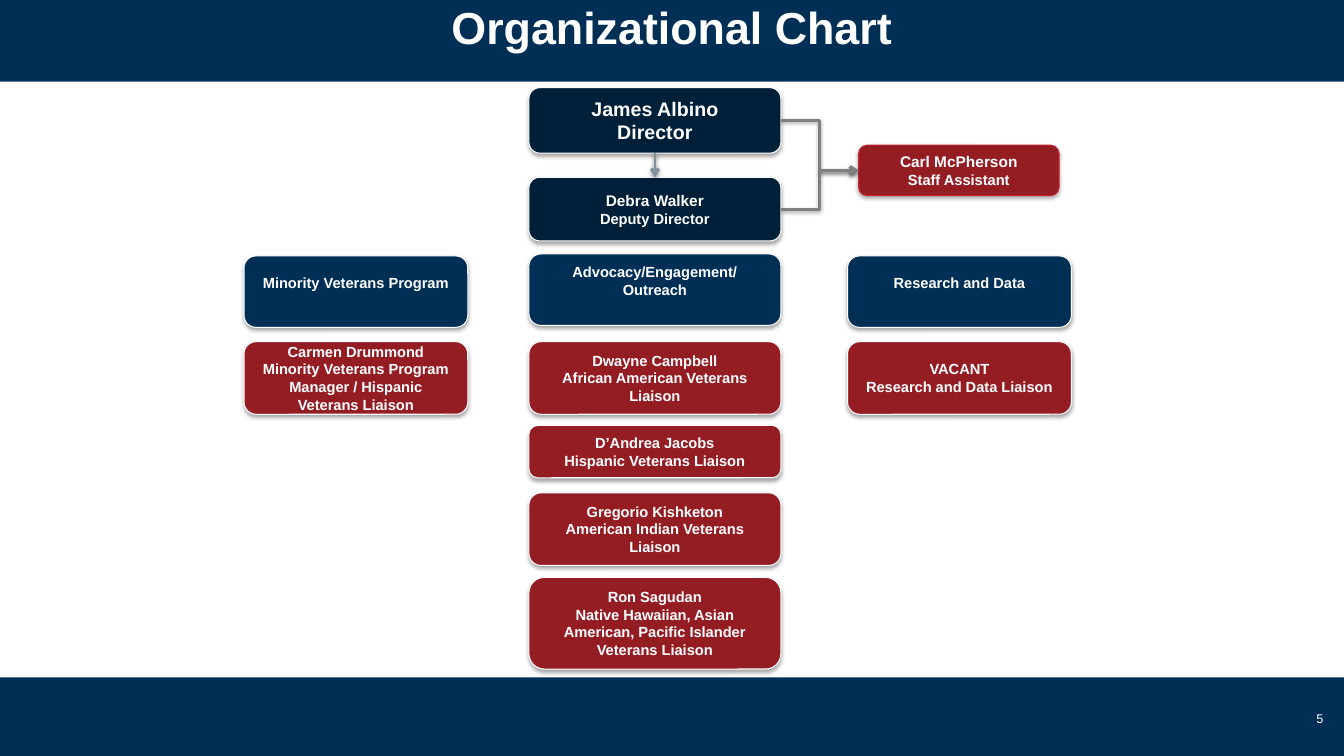
from dataclasses import dataclass

from lxml.etree import SubElement
from pptx import Presentation
from pptx.dml.color import RGBColor
from pptx.enum.shapes import MSO_CONNECTOR, MSO_SHAPE
from pptx.enum.text import MSO_ANCHOR, PP_ALIGN
from pptx.oxml.ns import qn
from pptx.util import Cm, Pt

SLIDE_WIDTH, SLIDE_HEIGHT = 33.87, 19.05
TOP, LEFT, BOTTOM, RIGHT = range(4)


@dataclass(frozen=True)
class Theme:
    font: str = "Arial"
    navy: str = "002F56"
    dark_navy: str = "001F39"
    red: str = "941D24"
    light_red: str = "C62630"
    white: str = "FFFFFF"
    gray: str = "808080"
    blue_gray: str = "839097"
    black: str = "000000"
    title_size: float = 32
    director_size: float = 14
    name_size: float = 11
    body_size: float = 10.5
    number_size: float = 9


def write_text(shape, lines, sizes, font, color, bold=True,
               align=PP_ALIGN.CENTER, anchor=MSO_ANCHOR.MIDDLE, margin_bottom=0.13):
    """Fill a shape with one paragraph per line, each with its own size."""
    frame = shape.text_frame
    frame.word_wrap = True
    frame.vertical_anchor = anchor
    frame.margin_bottom = Cm(margin_bottom)
    frame.text = "\n".join(lines)
    for paragraph, size in zip(frame.paragraphs, sizes):
        paragraph.alignment = align
        paragraph.font.name = font
        paragraph.font.size = Pt(size)
        paragraph.font.bold = bold
        paragraph.font.color.rgb = RGBColor.from_string(color)


def add_shadow(shape, color, opacity, distance):
    """Add a soft shadow straight below; call after fill and line are set."""
    effects = SubElement(shape.element.spPr, qn("a:effectLst"))
    shadow = SubElement(effects, qn("a:outerShdw"), blurRad=str(Pt(3.1)),
                        dist=str(Pt(distance)), dir="5400000", rotWithShape="0")
    tint = SubElement(shadow, qn("a:srgbClr"), val=color)
    SubElement(tint, qn("a:alpha"), val=str(opacity * 1000))


class OrgChart:
    """Holds the theme and the slide that the elements are drawn on."""

    def __init__(self, slide, theme):
        self.slide = slide
        self.theme = theme

    def band(self, top, height):
        band = self.slide.shapes.add_shape(
            MSO_SHAPE.RECTANGLE, 0, Cm(top), Cm(SLIDE_WIDTH), Cm(height))
        band.fill.solid()
        band.fill.fore_color.rgb = RGBColor.from_string(self.theme.navy)
        band.line.fill.background()
        band.shadow.inherit = False

    def title(self, text):
        title = self.slide.shapes.title
        title.left, title.top = Cm(0), Cm(-0.25)
        title.width, title.height = Cm(SLIDE_WIDTH), Cm(1.85)
        write_text(title, [text], [self.theme.title_size],
                   self.theme.font, self.theme.white)
        title.element.getparent().append(title.element)  # in front of the bands

    def box(self, lines, left, top, width, height, fill,
            sizes=None, line=None, margin_bottom=0.13):
        theme = self.theme
        box = self.slide.shapes.add_shape(
            MSO_SHAPE.ROUNDED_RECTANGLE, Cm(left), Cm(top), Cm(width), Cm(height))
        box.fill.solid()
        box.fill.fore_color.rgb = RGBColor.from_string(fill)
        box.line.color.rgb = RGBColor.from_string(line or theme.white)
        box.line.width = Pt(0.75)
        add_shadow(box, theme.black, opacity=35, distance=1.8)
        write_text(box, lines, sizes or [theme.body_size] * len(lines),
                   theme.font, theme.white, margin_bottom=margin_bottom)
        return box

    def arrow(self, kind, start, start_side, end, end_side, color):
        arrow = self.slide.shapes.add_connector(kind, 0, 0, 0, 0)
        arrow.begin_connect(start, start_side)
        arrow.end_connect(end, end_side)
        arrow.line.color.rgb = RGBColor.from_string(color)
        arrow.line.width = Pt(2)
        SubElement(arrow.element.spPr.find(qn("a:ln")), qn("a:tailEnd"), type="arrow")
        add_shadow(arrow, self.theme.black, opacity=38, distance=1.6)

    def slide_number(self, number):
        box = self.slide.shapes.add_textbox(Cm(25.7), Cm(17.78), Cm(7.9), Cm(1.02))
        write_text(box, [number], [self.theme.number_size], self.theme.font,
                   self.theme.white, bold=False, align=PP_ALIGN.RIGHT,
                   anchor=MSO_ANCHOR.TOP)


def main():
    presentation = Presentation()
    presentation.slide_width = Cm(SLIDE_WIDTH)
    presentation.slide_height = Cm(SLIDE_HEIGHT)
    slide = presentation.slides.add_slide(presentation.slide_layouts[5])
    theme = Theme()
    chart = OrgChart(slide, theme)

    chart.band(0, 2.06)
    chart.band(17.07, SLIDE_HEIGHT - 17.07)
    chart.title("Organizational Chart")

    # Column positions as (left, width)
    programs, outreach, research = (6.15, 5.64), (13.33, 6.35), (21.36, 5.64)

    leader_sizes = [theme.name_size, theme.body_size]
    director = chart.box(["James Albino", "Director"], outreach[0], 2.21, outreach[1], 1.65,
                         theme.dark_navy, sizes=[theme.director_size] * 2)
    deputy = chart.box(["Debra Walker", "Deputy Director"], outreach[0], 4.47, outreach[1], 1.6,
                       theme.dark_navy, sizes=leader_sizes)
    assistant = chart.box(["Carl McPherson", "Staff Assistant"], 21.64, 3.66, 5.05, 1.27,
                          theme.red, sizes=leader_sizes, line=theme.light_red)

    chart.arrow(MSO_CONNECTOR.STRAIGHT, director, BOTTOM, deputy, TOP, theme.blue_gray)
    for leader in (director, deputy):
        chart.arrow(MSO_CONNECTOR.ELBOW, leader, RIGHT, assistant, LEFT, theme.gray)

    sections = [
        ("Minority Veterans Program", programs, 6.45),
        ("Advocacy/Engagement/ Outreach", outreach, 6.4),
        ("Research and Data", research, 6.45),
    ]
    for name, (left, width), top in sections:
        chart.box([name], left, top, width, 1.8, theme.navy, margin_bottom=0.58)

    staff = [
        ("Carmen Drummond", "Minority Veterans Program Manager / Hispanic Veterans Liaison",
         programs, 8.61, 1.83),
        ("Dwayne Campbell", "African American Veterans Liaison", outreach, 8.61, 1.83),
        ("VACANT", "Research and Data Liaison", research, 8.61, 1.83),
        ("D’Andrea Jacobs", "Hispanic Veterans Liaison", outreach, 10.72, 1.32),
        ("Gregorio Kishketon", "American Indian Veterans Liaison", outreach, 12.42, 1.83),
        ("Ron Sagudan", "Native Hawaiian, Asian American, Pacific Islander Veterans Liaison",
         outreach, 14.55, 2.31),
    ]
    for name, role, (left, width), top, height in staff:
        chart.box([name, role], left, top, width, height, theme.red)

    chart.slide_number("5")
    presentation.save("out.pptx")


if __name__ == "__main__":
    main()
